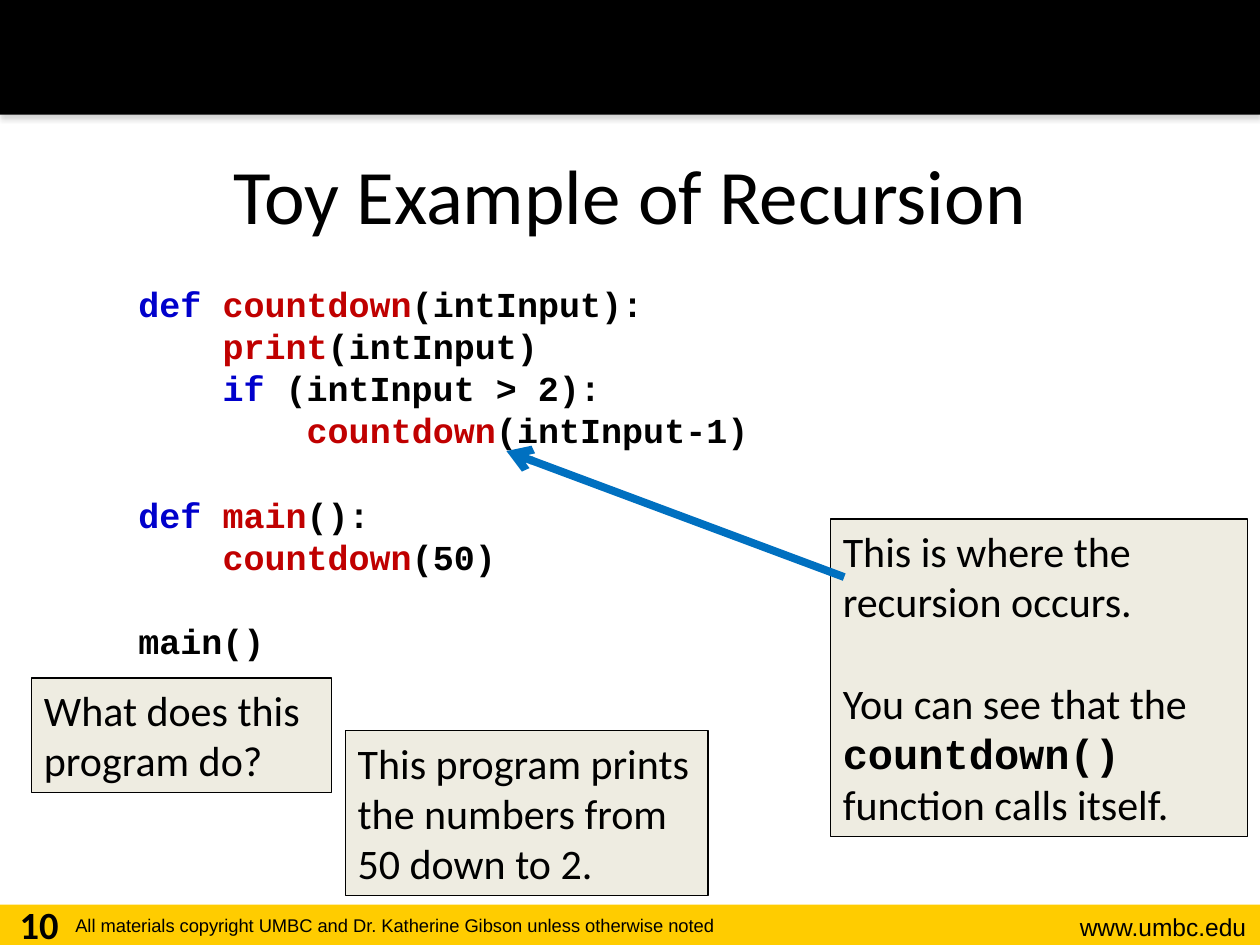
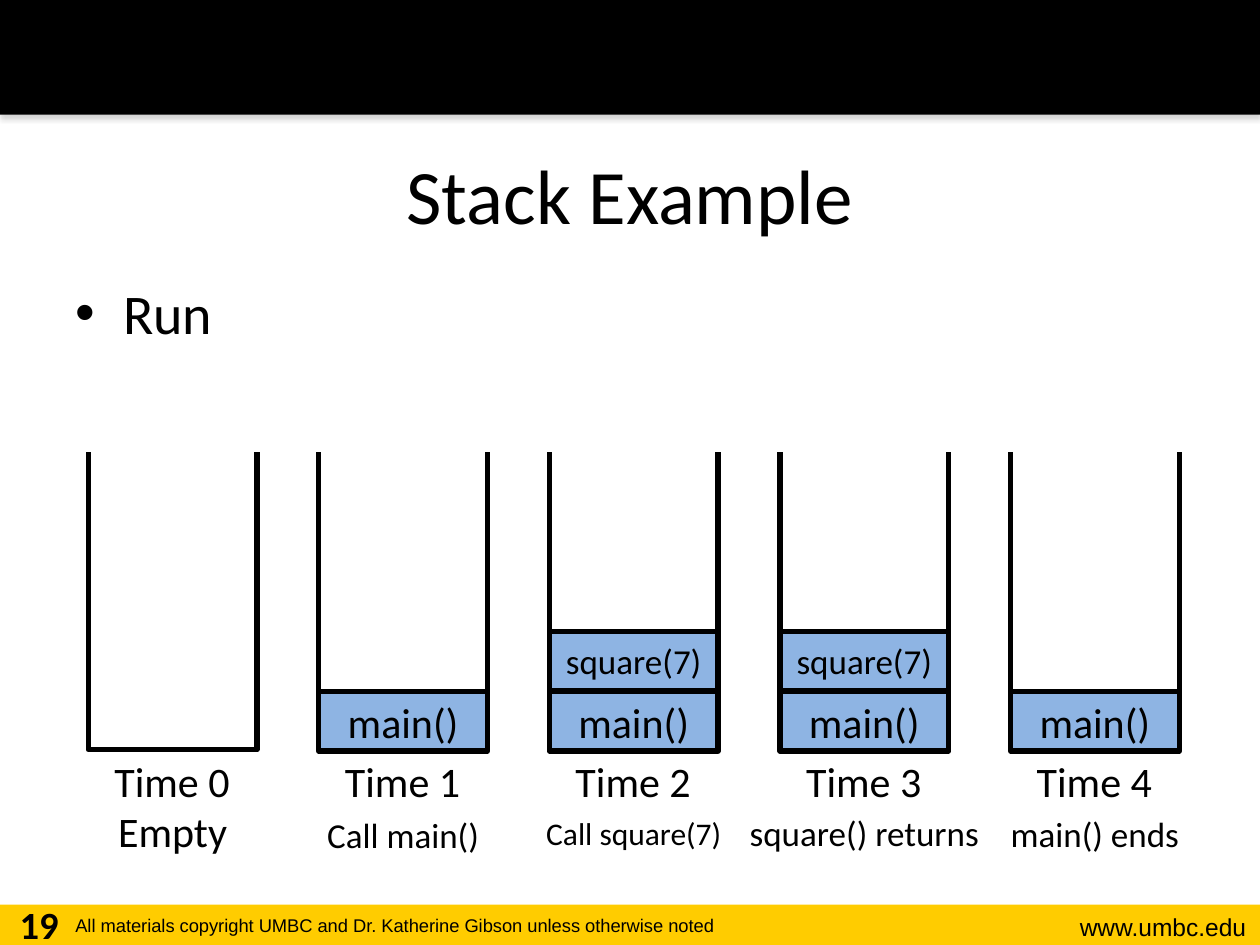
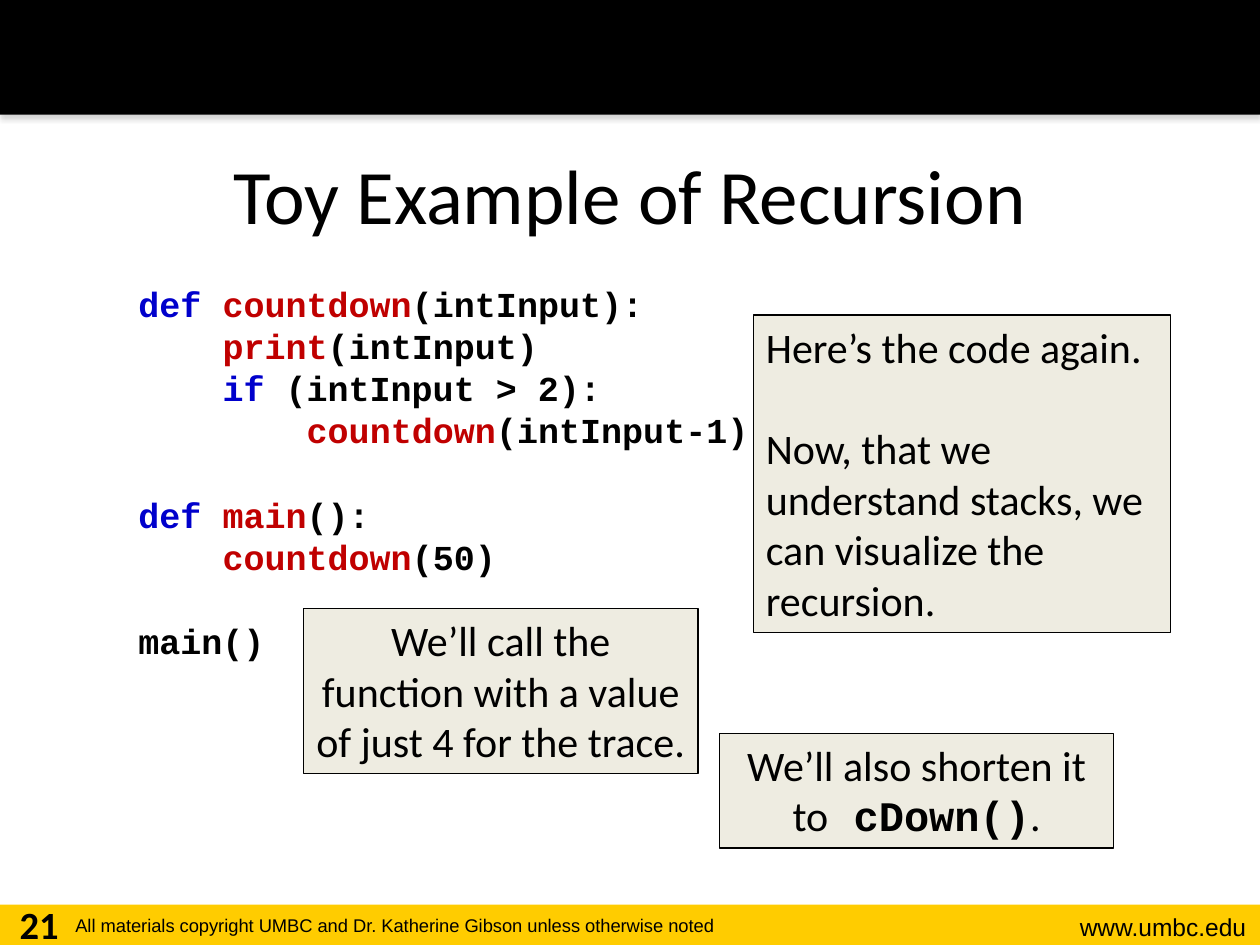
from dataclasses import dataclass

from lxml import etree
from pptx import Presentation
from pptx import util as u
from pptx.dml.color import RGBColor
from pptx.enum import shapes, text
from pptx.oxml.ns import qn

LEFT, MID, RIGHT = text.PP_ALIGN.LEFT, text.PP_ALIGN.CENTER, text.PP_ALIGN.RIGHT


@dataclass(frozen=True)
class Theme:
    # Colours
    ink: str = "000000"
    paper: str = "FFFFFF"
    gold: str = "FFCC00"
    note: str = "EEECE1"
    frame: str = "8EB4E3"
    arrow: str = "0070C0"
    key: str = "0000CC"
    func: str = "C00000"
    shade: str = "808080"
    # Fonts
    sans: str = "Calibri"
    plain: str = "Arial"
    mono: str = "Courier New"
    # Type sizes and line widths
    title: float = 44
    body: float = 32
    large: float = 24
    page: float = 22
    code: float = 20
    small: float = 18
    site: float = 14
    legal: float = 10.5
    thin: float = 0.75
    thick: float = 3
    bold: float = 4.5


TH = Theme()
COLS, ROWS = 100, 75
KEYS = {"def", "if"}
FUNCS = {"countdown", "print", "main"}

# A bar parts the runs of a line; an empty line makes a gap.
CODE = [
    "def| |countdown|(intInput):",
    "    |print|(intInput)",
    "    |if| (intInput > 2):",
    "        |countdown|(intInput-1)",
    "",
    "def| |main|():",
    "    |countdown|(50)",
    "",
    "main()",
]

# Note, type size, top row and width in columns for each moment
TIMES = [
    ("Empty", TH.large, 63.4, 14.3),
    ("Call main()", TH.code, 64.1, 14.3),
    ("Call square(7)", TH.small, 64.1, 16.5),
    ("square() returns", TH.code, 63.9, 20.6),
    ("main() ends", TH.code, 64, 15.4),
]
CALLS = [[], ["main()"], ["main()", "square(7)"], ["main()", "square(7)"], ["main()"]]


class Deck:
    def __init__(self, theme):
        self.th = theme
        self.prs = Presentation()
        self.prs.slide_width, self.prs.slide_height = u.Inches(10), u.Inches(7.5)
        self.slide = self.art = None

    def x(self, cols):
        return round(self.prs.slide_width * cols / COLS)

    def y(self, rows):
        return round(self.prs.slide_height * rows / ROWS)

    def place(self, box):
        left, top, wide, high = box
        return self.x(left), self.y(top), self.x(wide), self.y(high)

    def page(self, title, num):
        """Start a slide with its bands, footer, title and number."""
        th = self.th
        self.slide = self.prs.slides.add_slide(self.prs.slide_layouts[6])
        self.art = self.slide.shapes
        self.rect((0, 71.8, 100, 3.2), th.gold)
        self.shade(self.rect((0, 0, 100, 9.1), th.ink))
        self.label((80, 71.9, 19.9, 3.4), "www.umbc.edu", th.site, RIGHT, th.plain)
        self.label((5, 72.1, 65.6, 2.9),
                   "All materials copyright UMBC and Dr. Katherine Gibson unless otherwise noted",
                   th.legal, LEFT, th.plain)
        head = self.label((5, 9.1, 90, 12.5), title, th.title)
        head.text_frame.vertical_anchor = text.MSO_ANCHOR.MIDDLE
        mark = self.label((0, 71, 6.2, 4), num, th.page)
        mark.text_frame.paragraphs[0].runs[0].font.bold = True

    def group(self):
        self.art = self.slide.shapes.add_group_shape().shapes

    def rect(self, box, fill, line=None, width=0):
        shp = self.art.add_shape(shapes.MSO_SHAPE.RECTANGLE, *self.place(box))
        shp.shadow.inherit = False
        shp.fill.solid()
        shp.fill.fore_color.rgb = RGBColor.from_string(fill)
        if line:
            shp.line.color.rgb = RGBColor.from_string(line)
            shp.line.width = u.Pt(width)
        else:
            shp.line.fill.background()
        return shp

    def shade(self, shp):
        """Cast a soft shadow straight down."""
        fx = shp._element.spPr.find(qn("a:effectLst"))
        drop = etree.SubElement(fx, qn("a:outerShdw"), blurRad=str(u.Pt(3.1)),
                                dist=str(u.Pt(1.8)), dir="5400000", rotWithShape="0")
        tint = etree.SubElement(drop, qn("a:srgbClr"), val=self.th.shade)
        etree.SubElement(tint, qn("a:alpha"), val="35000")

    def style(self, run, size, face, color=None, bold=False):
        font = run.font
        font.size, font.name, font.bold = u.Pt(size), face, bold
        font.color.rgb = RGBColor.from_string(color or self.th.ink)

    def paras(self, frame, lines, gap):
        """Yield each paragraph with its parts, turning empty lines into space."""
        frame.word_wrap = True
        para, skip = None, False
        for line in lines:
            if not line:
                skip = True
                continue
            para = frame.add_paragraph() if para is not None else frame.paragraphs[0]
            if skip:
                para.space_before, skip = u.Pt(gap), False
            yield para, line.split("|")

    def fill(self, frame, lines, size, align=LEFT, face=None):
        """Odd parts of a line are set in bold code type."""
        for para, parts in self.paras(frame, lines, 29.3):
            para.alignment = align
            for i, part in enumerate(parts):
                run = para.add_run()
                run.text = part
                font = self.th.mono if i % 2 else face or self.th.sans
                self.style(run, size, font, bold=bool(i % 2))

    def label(self, box, words, size, align=MID, face=None):
        shp = self.art.add_textbox(*self.place(box))
        self.fill(shp.text_frame, [words], size, align, face)
        return shp

    def note(self, box, lines, align=LEFT):
        shp = self.rect(box, self.th.note, self.th.ink, self.th.thin)
        shp.text_frame.vertical_anchor = text.MSO_ANCHOR.TOP
        self.fill(shp.text_frame, lines, self.th.large, align)

    def code(self, lines):
        th = self.th
        frame = self.art.add_textbox(*self.place((5, 21.6, 90, 49.4))).text_frame
        frame.margin_top = u.Inches(0.08)
        for para, parts in self.paras(frame, lines, 24.1):
            para._p.get_or_add_pPr().set("marL", str(u.Inches(0.5)))
            para.line_spacing = u.Pt(24.1)
            for part in parts:
                run = para.add_run()
                run.text = part
                tone = th.key if part in KEYS else th.func if part in FUNCS else th.ink
                self.style(run, th.code, th.mono, tone, True)

    def bullet(self, words):
        shp = self.art.add_textbox(*self.place((5, 21.6, 90, 49.4)))
        prop = shp.text_frame.paragraphs[0]._p.get_or_add_pPr()
        prop.set("marL", str(u.Inches(0.38)))
        prop.set("indent", str(-u.Inches(0.38)))
        etree.SubElement(prop, qn("a:buFont"), typeface=self.th.plain)
        etree.SubElement(prop, qn("a:buChar"), char="•")
        self.fill(shp.text_frame, [words], self.th.body)

    def arrow(self, start, end):
        con = self.art.add_connector(shapes.MSO_CONNECTOR.STRAIGHT,
                                     self.x(start[0]), self.y(start[1]),
                                     self.x(end[0]), self.y(end[1]))
        con.line.color.rgb = RGBColor.from_string(self.th.arrow)
        con.line.width = u.Pt(self.th.bold)
        prop = con._element.spPr
        etree.SubElement(prop.find(qn("a:ln")), qn("a:tailEnd"), type="arrow")
        etree.SubElement(prop, qn("a:effectLst"))

    def stack(self, step, calls, note, size, top, wide):
        """Draw an open jar with its labels and the calls it holds."""
        th = self.th
        left = 7 + 18.3 * step
        mid = left + 6.7
        self.group()
        self.rect((left, 34.7, 13.4, 24.8), th.paper, th.ink, th.thick)
        self.rect((left - 0.3, 34.1, 14.1, 1.6), th.paper, th.paper, th.thick)
        self.label((left - 0.5, 59.5, 14.3, 5), f"Time {step}", th.large)
        self.label((mid - wide / 2, top, wide, 5 * size / 24), note, size)
        self.art = self.slide.shapes
        for level, call in enumerate(calls):
            box = (left, 54.9 - 4.8 * level, 13.4, 4.7)
            shp = self.rect(box, th.frame, th.ink, th.thick)
            shp.text_frame.vertical_anchor = text.MSO_ANCHOR.MIDDLE
            self.fill(shp.text_frame, [call], th.code if level else th.large, MID)


def main():
    deck = Deck(TH)

    # The recursive program
    deck.page("Toy Example of Recursion", "10")
    deck.code(CODE)
    deck.note((65.9, 41.2, 33.1, 25.2),
              ["This is where the recursion occurs.", "",
               "You can see that the |countdown() |function calls itself."])
    deck.arrow((67, 45.8), (40.2, 35.8))
    deck.note((2.5, 53.8, 23.8, 9.1), ["What does this program do?"])
    deck.note((27.4, 58, 28.8, 13.1),
              ["This program prints the numbers from 50 down to 2."])

    # The call stack over time
    deck.page("Stack Example", "19")
    deck.bullet("Run")
    for step, (calls, when) in enumerate(zip(CALLS, TIMES)):
        deck.stack(step, calls, *when)

    # The program before its trace
    deck.page("Toy Example of Recursion", "21")
    deck.code(CODE)
    deck.note((59.8, 25, 33.1, 25.2),
              ["Here’s the code again.", "",
               "Now, that we understand stacks, we can visualize the recursion."])
    deck.note((24.1, 48.3, 31.3, 13.1),
              ["We’ll call the function with a value of just 4 for the trace."], MID)
    deck.note((57.1, 58.2, 31.3, 9.1),
              ["We’ll also shorten it to| cDown()|."], MID)

    deck.prs.save("out.pptx")


if __name__ == "__main__":
    main()
